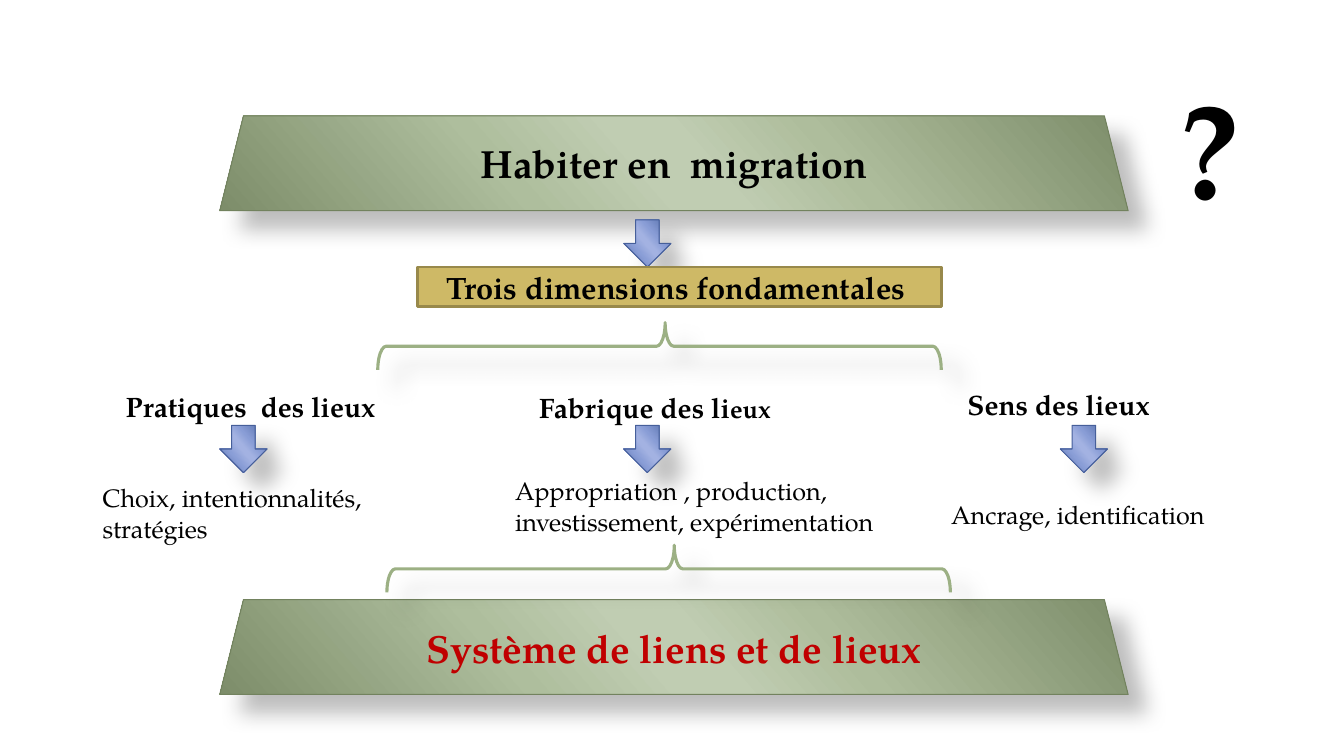
from lxml import etree
from pptx import Presentation
from pptx.dml.color import RGBColor
from pptx.enum import shapes, text
from pptx.oxml import ns
from pptx.util import Cm, Pt

FONT = "TeX Gyre Pagella"
COLOURS = {
    "ink": "000000", "red": "C00000", "brace": "9CB084",
    "banner_line": "72825E", "arrow_line": "465F9A",
    "gold": "CEB966", "gold_line": "98894B",
}
STOPS = (0, 33, 47, 53, 68, 100)
GRADIENTS = {
    "banner": ("7D8D6A", "AEBD9C", "C0CDB2", "C0CDB2", "AEBE9D", "7D8D6A"),
    "arrow": ("516BA6", "899DD6", "A3B2E2", "A3B2E2", "8A9ED7", "516BA6"),
}
HEADING = {"size": Pt(20), "bold": True}
DETAIL = {"size": Pt(18), "bold": False}
BANNER = {"size": Pt(28), "bold": True}
ARROW = 1.19

DIMENSIONS = [
    {"heading": ["Pratiques  des lieux"], "heading_box": (2.92, 9.68, 7.04, 1.12),
     "spacing": 1.0, "arrow_left": 5.54,
     "details": ["Choix, intentionnalités,", "stratégies"],
     "details_box": (2.34, 12.04, 7.29, 1.78)},
    {"heading": ["Fabrique des li", "eux"], "heading_box": (13.34, 9.8, 6.73, 1.02),
     "spacing": 0.9, "arrow_left": 15.72,
     "details": ["Appropriation , production,", "investissement, expérimentation"],
     "details_box": (12.73, 11.86, 9.73, 1.78)},
    {"heading": ["Sens des lieux"], "heading_box": (24.13, 9.73, 5.51, 1.02),
     "spacing": 0.9, "arrow_left": 26.72,
     "details": ["Ancrage, identification"],
     "details_box": (23.72, 12.47, 7.16, 1.02)},
]


def rgb(name):
    return RGBColor.from_string(COLOURS[name])


def set_all(target, values):
    for name, value in values.items():
        setattr(target, name, value)


def lengths(box):
    return [Cm(value) for value in box]


def add_run(paragraph, words, style, colour="ink"):
    run = paragraph.add_run()
    run.text = words
    set_all(run.font, {"name": FONT, **style})
    run.font.color.rgb = rgb(colour)
    return run


def add_preset(slide, preset, box, line, width):
    shape = slide.shapes.add_shape(preset, *lengths(box))
    shape.shadow.inherit = False
    shape.line.color.rgb = rgb(line)
    shape.line.width = Pt(width)
    return shape


def cast_shadow(shape):
    effects = shape.element.spPr.find(ns.qn("a:effectLst"))
    shadow = etree.SubElement(effects, ns.qn("a:outerShdw"), blurRad=str(Pt(15)),
                              dist=str(Pt(18)), dir="2700000", rotWithShape="0")
    black = etree.SubElement(shadow, ns.qn("a:srgbClr"), val=COLOURS["ink"])
    etree.SubElement(black, ns.qn("a:alpha"), val="26000")


def shade(shape, colours):
    shape.fill.gradient()
    gradient = shape.element.spPr.find(ns.qn("a:gradFill"))
    for child in list(gradient):
        gradient.remove(child)
    stops = etree.SubElement(gradient, ns.qn("a:gsLst"))
    for position, colour in zip(STOPS, colours):
        stop = etree.SubElement(stops, ns.qn("a:gs"), pos=str(position * 1000))
        etree.SubElement(stop, ns.qn("a:srgbClr"), val=colour)
    etree.SubElement(gradient, ns.qn("a:lin"), ang=str(139 * 60000), scaled="0")


def add_banner(slide, box):
    banner = add_preset(slide, shapes.MSO_SHAPE.TRAPEZOID, box, "banner_line", 0.75)
    banner.rotation = 0
    shade(banner, GRADIENTS["banner"])
    cast_shadow(banner)
    return banner


def add_title_banner(slide, box):
    title = slide.shapes.title
    title.element.addprevious(add_banner(slide, box).element)
    set_all(title, dict(zip(("left", "top", "width", "height"), lengths(box))))
    set_all(title.text_frame, {"vertical_anchor": text.MSO_ANCHOR.MIDDLE,
                               "auto_size": text.MSO_AUTO_SIZE.NONE,
                               "word_wrap": True})
    paragraph = title.text_frame.paragraphs[0]
    paragraph.alignment = text.PP_ALIGN.CENTER
    add_run(paragraph, "Habiter en  migration", BANNER)


def add_conclusion(slide, box):
    paragraph = add_banner(slide, box).text_frame.paragraphs[0]
    paragraph.alignment = text.PP_ALIGN.CENTER
    add_run(paragraph, "Système de liens et de lieux", BANNER, "red")


def add_arrow(slide, left, top):
    arrow = add_preset(slide, shapes.MSO_SHAPE.DOWN_ARROW,
                       (left, top, ARROW, ARROW), "arrow_line", 0.75)
    shade(arrow, GRADIENTS["arrow"])
    cast_shadow(arrow)


def add_brace(slide, box):
    left, top, width, height = box
    shift = (width - height) / 2
    brace = add_preset(slide, shapes.MSO_SHAPE.LEFT_BRACE,
                       (left + shift, top - shift, height, width), "brace", 2.25)
    brace.rotation = 90
    brace.adjustments[0] = 0.18
    brace.adjustments[1] = 0.49
    brace.fill.background()
    cast_shadow(brace)


def add_subtitle(slide, box):
    subtitle = add_preset(slide, shapes.MSO_SHAPE.RECTANGLE, box, "gold_line", 2)
    subtitle.fill.solid()
    subtitle.fill.fore_color.rgb = rgb("gold")
    paragraph = subtitle.text_frame.paragraphs[0]
    paragraph.alignment = text.PP_ALIGN.CENTER
    add_run(paragraph, "Trois dimensions fondamentales ", {"size": Pt(22), "bold": True})


def add_label(slide, box, wrap=False):
    frame = slide.shapes.add_textbox(*lengths(box)).text_frame
    set_all(frame, {"word_wrap": wrap, "auto_size": text.MSO_AUTO_SIZE.SHAPE_TO_FIT_TEXT})
    return frame


def add_question(slide, box):
    paragraph = add_label(slide, box, wrap=True).paragraphs[0]
    paragraph.alignment = text.PP_ALIGN.CENTER
    add_run(paragraph, "?", {"size": Pt(96), "bold": True})


def add_dimension(slide, dimension, arrow_top):
    heading = add_label(slide, dimension["heading_box"]).paragraphs[0]
    heading.line_spacing = dimension["spacing"]
    for words, size in zip(dimension["heading"], (20, 18)):
        add_run(heading, words, {**HEADING, "size": Pt(size)})
    add_arrow(slide, dimension["arrow_left"], arrow_top)
    details = add_label(slide, dimension["details_box"])
    for index, words in enumerate(dimension["details"]):
        paragraph = details.add_paragraph() if index else details.paragraphs[0]
        add_run(paragraph, words, DETAIL)


def main():
    deck = Presentation()
    set_all(deck, {"slide_width": Cm(33.87), "slide_height": Cm(19.05)})
    slide = deck.slides.add_slide(deck.slide_layouts.get_by_name("Title Only"))
    add_title_banner(slide, (5.54, 2.92, 22.89, 2.39))
    add_brace(slide, (9.52, 8.13, 14.2, ARROW))
    add_question(slide, (28.73, 1.52, 3.48, 4.37))
    add_conclusion(slide, (5.54, 15.11, 22.89, 2.39))
    add_arrow(slide, 15.72, 5.54)
    for dimension in DIMENSIONS:
        add_dimension(slide, dimension, 10.72)
    add_subtitle(slide, (10.52, 6.73, 13.21, 0.99))
    add_brace(slide, (9.75, 13.74, 14.2, ARROW))
    deck.save("out.pptx")


if __name__ == "__main__":
    main()
